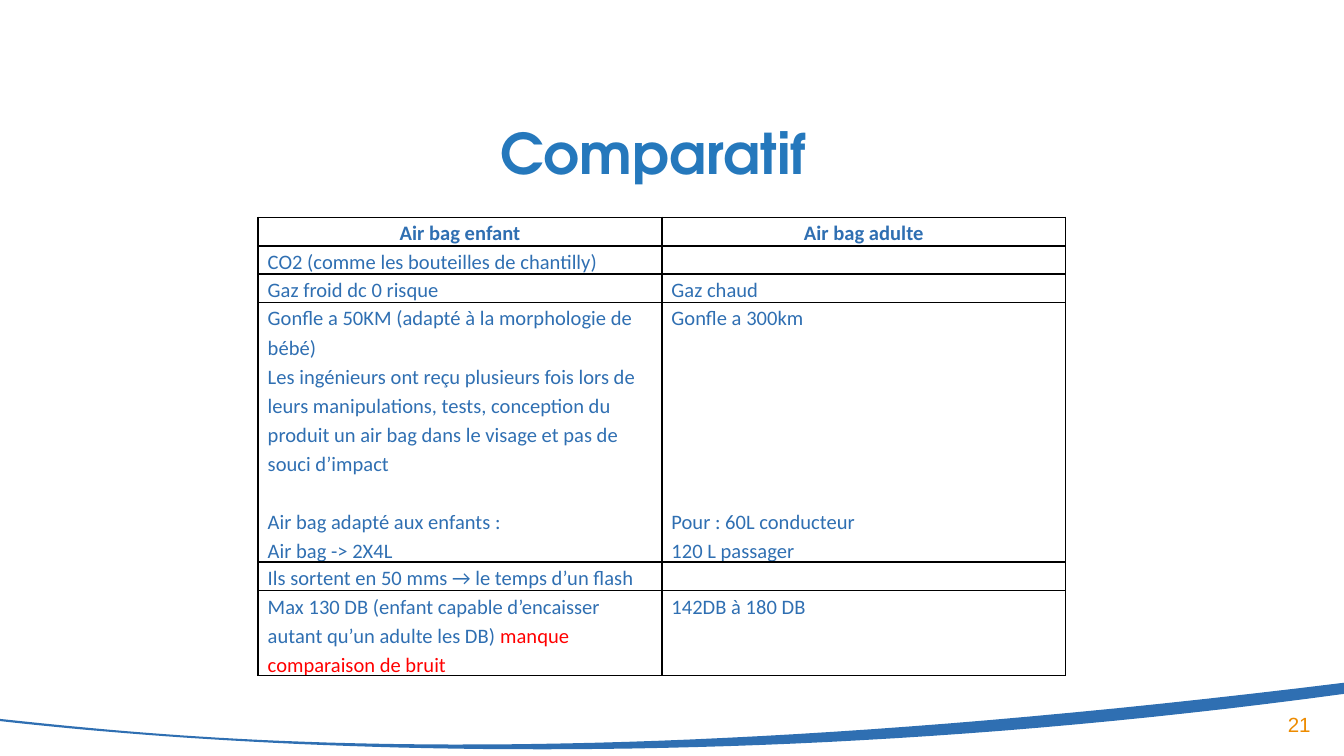
from lxml.etree import SubElement
from pptx import Presentation
from pptx.dml.color import RGBColor
from pptx.enum.text import MSO_ANCHOR, MSO_AUTO_SIZE, PP_ALIGN
from pptx.oxml.ns import qn
from pptx.util import Cm, Pt

BLUE = RGBColor(0x2F, 0x6F, 0xB2)
TITLE_BLUE = RGBColor(0x25, 0x78, 0xBC)
ORANGE = RGBColor(0xED, 0x8B, 0x00)
RED = RGBColor(0xFF, 0x00, 0x00)
BLACK = RGBColor(0x00, 0x00, 0x00)

TITLE_FONT = {"name": "TeX Gyre Adventor", "size": Pt(30), "bold": True}
NUMBER_FONT = {"name": "Arial", "size": Pt(11)}
CELL_FONT = {"name": "Calibri", "size": Pt(11), "bold": False}
HEADER_FONT = CELL_FONT | {"bold": True}

LINE_HEIGHT = 15.6  # points taken by one line of table text
NO_INSETS = dict.fromkeys(
    ("margin_left", "margin_top", "margin_right", "margin_bottom"), 0)
CELL_FORMAT = NO_INSETS | {"margin_left": Cm(0.18), "margin_right": Cm(0.18),
                           "vertical_anchor": MSO_ANCHOR.TOP}

# A cell is a list of paragraphs: (blank lines before, [(text, colour), ...])
ROWS = [
    [[(0, [("Air bag enfant", BLUE)])], [(0, [("Air bag adulte", BLUE)])]],
    [[(0, [("CO2 (comme les bouteilles de chantilly)", BLUE)])], []],
    [[(0, [("Gaz froid dc 0 risque", BLUE)])], [(0, [("Gaz chaud", BLUE)])]],
    [[(0, [("Gonfle a 50KM (adapté à la morphologie de bébé)", BLUE)]),
      (0, [("Les ingénieurs ont reçu plusieurs fois lors de leurs "
            "manipulations, tests, conception du produit un air bag dans le "
            "visage et pas de souci d’impact", BLUE)]),
      (1, [("Air bag adapté aux enfants :", BLUE)]),
      (0, [("Air bag -> 2X4L", BLUE)])],
     [(0, [("Gonfle a 300km", BLUE)]),
      (6, [("Pour : 60L conducteur", BLUE)]),
      (0, [("120 L passager", BLUE)])]],
    [[(0, [("Ils sortent en 50 mms → le temps d’un flash", BLUE)])], []],
    [[(0, [("Max 130 DB (enfant capable d’encaisser autant qu’un adulte "
            "les DB) ", BLUE),
           ("manque comparaison de bruit", RED)])],
     [(0, [("142DB à 180 DB", BLUE)])]],
]
ROW_HEIGHTS = [0.48, 0.48, 0.48, 4.57, 0.48, 1.5]


def apply_format(target, values):
    for name, value in values.items():
        setattr(target, name, value)


def add_run(paragraph, text, font, colour):
    run = paragraph.add_run()
    run.text = text
    apply_format(run.font, font)
    run.font.color.rgb = colour


def place(shape, left, top, width, height):
    apply_format(shape, {"left": Cm(left), "top": Cm(top),
                         "width": Cm(width), "height": Cm(height)})


def bezier(start, first, second, end, steps=48):
    """Return points along a cubic curve, both ends included."""
    points = []
    for step in range(steps + 1):
        t = step / steps
        weights = ((1 - t) ** 3, 3 * t * (1 - t) ** 2,
                   3 * t ** 2 * (1 - t), t ** 3)
        points.append(tuple(
            sum(weight * value for weight, value in zip(weights, axis))
            for axis in zip(start, first, second, end)))
    return points


def add_swoosh(slide, left, top):
    lower = bezier((0, 0.71), (4.24, 1.2), (13.56, 1.86), (25.63, 0.21))
    upper = bezier((25.63, 0), (10.87, 1.83), (3.78, 1.07), (0.18, 0.69))
    points = [(Cm(left + x), Cm(top + y)) for x, y in lower + upper]
    builder = slide.shapes.build_freeform(*points[0], scale=1.0)
    builder.add_line_segments(points[1:], close=True)
    swoosh = builder.convert_to_shape()
    swoosh.shadow.inherit = False
    swoosh.fill.solid()
    swoosh.fill.fore_color.rgb = BLUE
    swoosh.line.fill.background()


def add_page_number(slide, left, top, width, height):
    box = slide.shapes.add_textbox(Cm(left), Cm(top), Cm(width), Cm(height))
    apply_format(box.text_frame, {"word_wrap": True,
                                  "vertical_anchor": MSO_ANCHOR.MIDDLE})
    paragraph = box.text_frame.paragraphs[0]
    paragraph.alignment = PP_ALIGN.RIGHT
    add_run(paragraph, "21", NUMBER_FONT, ORANGE)


def fill_title(slide, left, top, width, height):
    title = slide.shapes.title
    place(title, left, top, width, height)
    apply_format(title.text_frame, NO_INSETS | {
        "word_wrap": True, "auto_size": MSO_AUTO_SIZE.NONE,
        "vertical_anchor": MSO_ANCHOR.TOP})
    paragraph = title.text_frame.paragraphs[0]
    apply_format(paragraph, {"alignment": PP_ALIGN.CENTER,
                             "line_spacing": 0.8})
    add_run(paragraph, "Comparatif ", TITLE_FONT, TITLE_BLUE)


def add_borders(cell):
    properties = cell._tc.get_or_add_tcPr()
    for index, side in enumerate(("a:lnL", "a:lnR", "a:lnT", "a:lnB")):
        line = properties.makeelement(qn(side), {"w": str(Pt(1))})
        fill = SubElement(line, qn("a:solidFill"))
        SubElement(fill, qn("a:srgbClr"), val=str(BLACK))
        properties.insert(index, line)


def fill_cell(cell, paragraphs, font, alignment):
    apply_format(cell, CELL_FORMAT)
    cell.fill.background()
    add_borders(cell)
    frame = cell.text_frame
    for index, (blank_lines, runs) in enumerate(paragraphs):
        paragraph = frame.add_paragraph() if index else frame.paragraphs[0]
        apply_format(paragraph, {"alignment": alignment, "line_spacing": 1.15,
                                 "space_before": Pt(blank_lines * LINE_HEIGHT)})
        for text, colour in runs:
            add_run(paragraph, text, font, colour)
    if not paragraphs:  # keeps an empty row as low as a line of text
        SubElement(frame.paragraphs[0]._p, qn("a:endParaRPr"), sz="1100")


def add_comparison(slide, left, top, width):
    shape = slide.shapes.add_table(len(ROWS), 2, Cm(left), Cm(top), Cm(width),
                                   Cm(sum(ROW_HEIGHTS)))
    table = shape.table
    apply_format(table, {"first_row": False, "horz_banding": False})
    for row_index, (height, cells) in enumerate(zip(ROW_HEIGHTS, ROWS)):
        table.rows[row_index].height = Cm(height)
        header = row_index == 0
        for column_index, paragraphs in enumerate(cells):
            fill_cell(table.cell(row_index, column_index), paragraphs,
                      HEADER_FONT if header else CELL_FONT,
                      PP_ALIGN.CENTER if header else PP_ALIGN.LEFT)


def main():
    presentation = Presentation()
    apply_format(presentation, {"slide_width": Cm(25.4),
                                "slide_height": Cm(14.29)})
    slide = presentation.slides.add_slide(presentation.slide_layouts[5])
    add_page_number(slide, 19.1, 13.31, 5.92, 0.76)
    add_swoosh(slide, -0.18, 12.9)
    fill_title(slide, 0.99, 2.49, 23.01, 1.3)
    add_comparison(slide, 4.88, 4.11, 15.26)
    presentation.save("out.pptx")


if __name__ == "__main__":
    main()
